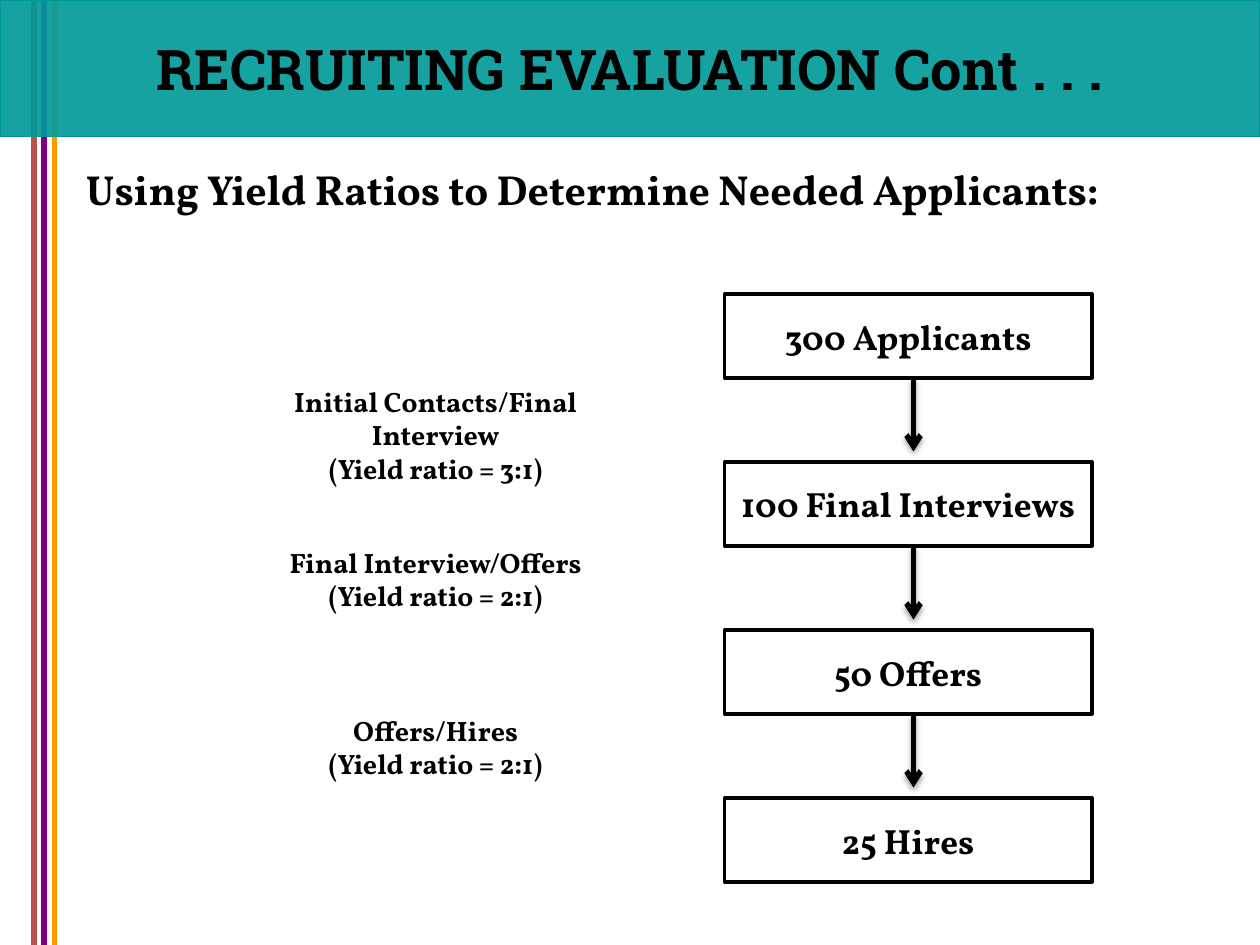
from pptx import Presentation
from pptx import util as u
from pptx.dml.color import RGBColor
from pptx.enum import shapes, text
from pptx.oxml import parse_xml
from pptx.oxml.ns import nsdecls

TITLE = "RECRUITING EVALUATION Cont . . ."
HEADING = "Using Yield Ratios to Determine Needed Applicants:"
STAGES = ["300 Applicants", "100 Final Interviews", "50 Offers", "25 Hires"]
RATIOS = [
    (216, ["Initial Contacts/Final Interview", "(Yield ratio = 3:1)"]),
    (308, ["Final Interview/Offers", "(Yield ratio = 2:1)"]),
    (404, ["Offers/Hires", "(Yield ratio = 2:1)"]),
]
STRIPES = [(19.44, 0, "C0504D"), (30.96, 0, "FF9900"), (25.2, -2, "800080")]

W, H = 720, 540
TEAL, BLACK, WHITE = "009999", "000000", "FFFFFF"
STAGE_X, STAGE_Y, STAGE_W, STAGE_H, PITCH = 414, 168, 210, 48, 96
ARROW_X, ARROW_LEN = 522, 42
RATIO_X, RATIO_W, RATIO_H = 126, 246, 46

SHADOW = (
    '<a:outerShdw blurRad="39370" dist="22860" dir="5400000" rotWithShape="0">'
    '<a:srgbClr val="000000"><a:alpha val="35000"/></a:srgbClr></a:outerShdw>'
)


def rgb(value):
    return RGBColor.from_string(value)


def xml(tag, attrs="", inner=""):
    return parse_xml(f"<a:{tag} {nsdecls('a')} {attrs}>{inner}</a:{tag}>")


def write(sp, lines, size, font="Vollkorn", align=text.PP_ALIGN.CENTER,
          anchor=text.MSO_ANCHOR.MIDDLE, wrap=True, grow=False):
    tf = sp.text_frame
    tf.word_wrap = wrap
    tf.auto_size = (text.MSO_AUTO_SIZE.SHAPE_TO_FIT_TEXT if grow
                    else text.MSO_AUTO_SIZE.NONE)
    tf.vertical_anchor = anchor
    for i, line in enumerate(lines):
        p = tf.add_paragraph() if i else tf.paragraphs[0]
        p.alignment = align
        r = p.add_run()
        r.text = line
        r.font.name, r.font.size, r.font.bold = font, u.Pt(size), True
        r.font.color.rgb = rgb(BLACK)


def paint(sp, fill, line, width):
    sp.fill.solid()
    sp.fill.fore_color.rgb = rgb(fill)
    sp.line.color.rgb = rgb(line)
    sp.line.width = u.Pt(width)


def add_label(s, box, lines, size, **fmt):
    sp = s.shapes.add_textbox(*map(u.Pt, box))
    write(sp, lines, size, anchor=text.MSO_ANCHOR.TOP, grow=True, **fmt)


def add_line(s, x, top, bottom, color, arrow=False):
    c = s.shapes.add_connector(shapes.MSO_CONNECTOR.STRAIGHT,
                               *map(u.Pt, (x, top, x, bottom)))
    c.line.color.rgb = rgb(color)
    c.line.width = u.Pt(3)
    if arrow:
        c.line._get_or_add_ln().append(xml("tailEnd", 'type="arrow"'))
    c._element.spPr.append(xml("effectLst", inner=SHADOW if arrow else ""))


def add_title(s):
    sp = s.shapes.title
    s.shapes._spTree.append(sp._element)
    sp.left, sp.top, sp.width, sp.height = map(u.Pt, (0, 0, W, 78))
    paint(sp, TEAL, TEAL, 0.75)
    color = sp._element.spPr.find(".//{*}solidFill/{*}srgbClr")
    color.append(xml("alpha", 'val="91000"'))
    write(sp, [TITLE], 32, font="Roboto Slab", wrap=False)


def main():
    prs = Presentation()
    prs.slide_width, prs.slide_height = u.Pt(W), u.Pt(H)
    s = prs.slides.add_slide(prs.slide_layouts[5])

    for x, top, color in STRIPES:
        add_line(s, x, top, H, color)
    add_title(s)

    for i, stage in enumerate(STAGES):
        box = (STAGE_X, STAGE_Y + i * PITCH, STAGE_W, STAGE_H)
        sp = s.shapes.add_shape(shapes.MSO_SHAPE.RECTANGLE, *map(u.Pt, box))
        sp.shadow.inherit = False
        paint(sp, WHITE, BLACK, 2)
        write(sp, [stage], 20)

    for top, lines in RATIOS:
        add_label(s, (RATIO_X, top, RATIO_W, RATIO_H), lines, 16)

    for i in range(len(STAGES) - 1):
        top = STAGE_Y + STAGE_H + i * PITCH
        add_line(s, ARROW_X, top, top + ARROW_LEN, BLACK, arrow=True)

    add_label(s, (42, 90, 600, 36), [HEADING], 24, align=text.PP_ALIGN.LEFT)
    prs.save("out.pptx")


if __name__ == "__main__":
    main()
